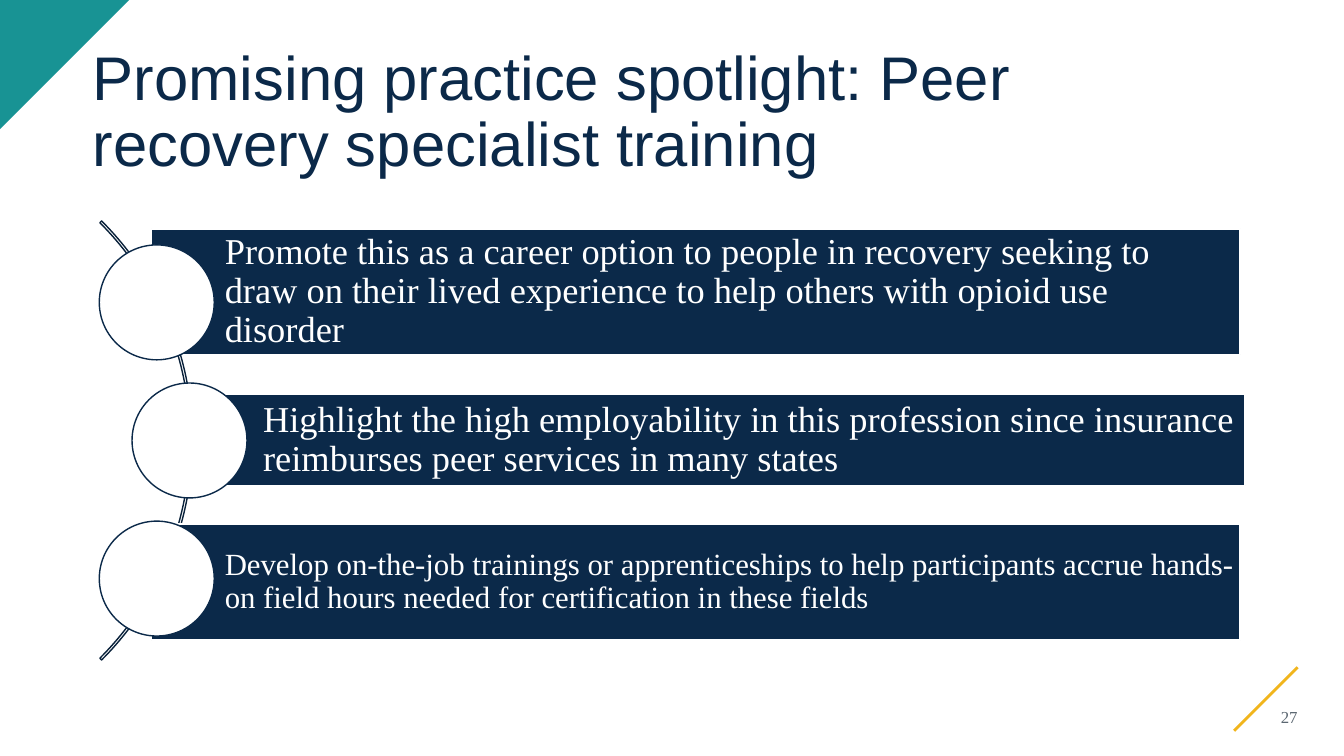
from math import sqrt

from lxml.etree import SubElement
from pptx import Presentation
from pptx.dml.color import RGBColor
from pptx.enum.shapes import MSO_CONNECTOR, MSO_SHAPE
from pptx.enum.text import MSO_ANCHOR, PP_ALIGN
from pptx.oxml.ns import qn
from pptx.util import Inches, Pt

NAVY = RGBColor(0x0B, 0x29, 0x49)
ARC_NAVY = RGBColor(0x09, 0x21, 0x3A)
TEAL = RGBColor(0x18, 0x93, 0x94)
GOLD = RGBColor(0xF1, 0xB5, 0x1C)
GRAY = RGBColor(0x5B, 0x67, 0x71)
WHITE = RGBColor(0xFF, 0xFF, 0xFF)

# Bar left, top, width, height, text margin, text size, text
PRACTICES = [
    (1.5, 2.27, 10.8, 1.25, 0.07, 26,
     "Promote this as a career option to people in recovery seeking to draw on "
     "their lived experience to help others with opioid use disorder"),
    (1.88, 3.91, 10.47, 0.91, 0.07, 26,
     "Highlight the high employability in this profession since insurance "
     "reimburses peer services in many states"),
    (1.5, 5.2, 10.8, 1.15, 0.06, 22,
     "Develop on-the-job trainings or apprenticeships to help participants accrue "
     "hands-on field hours needed for certification in these fields"),
]


def write_text(shape, text, font_name, size, color, margins=(0, 0, 0, 0),
               align=PP_ALIGN.LEFT, line_spacing=None):
    frame = shape.text_frame
    frame.word_wrap = True
    frame.vertical_anchor = MSO_ANCHOR.MIDDLE
    (frame.margin_left, frame.margin_top,
     frame.margin_right, frame.margin_bottom) = map(Inches, margins)
    para = frame.paragraphs[0]
    para.text = text
    para.alignment = align
    para.line_spacing = line_spacing
    para.font.name = font_name
    para.font.size = Pt(size)
    para.font.color.rgb = color


def add_outlined(page, kind, box, fill, line):
    shape = page.shapes.add_shape(kind, *map(Inches, box))
    shape.shadow.inherit = False
    if fill is None:
        shape.fill.background()
    else:
        shape.fill.solid()
        shape.fill.fore_color.rgb = fill
    shape.line.color.rgb = line
    shape.line.width = Pt(1)
    return shape


def add_corner_triangle(page, left, top, side):
    builder = page.shapes.build_freeform(Inches(left), Inches(top))
    builder.add_line_segments([(Inches(left + side), Inches(top)),
                               (Inches(left), Inches(top + side))], close=True)
    corner = builder.convert_to_shape()
    corner.shadow.inherit = False
    corner.fill.solid()
    corner.fill.fore_color.rgb = TEAL
    corner.line.fill.background()


def add_title(page, left, top, width, height):
    title = page.shapes.add_textbox(*map(Inches, (left, top, width, height)))
    write_text(title, "Promising practice spotlight: Peer recovery specialist training",
               "Arial", 44, NAVY, line_spacing=0.9)


def add_footer(page, left, top, width, height):
    """Gold slanted line, with the slide number at its lower right."""
    slant = page.shapes.add_connector(
        MSO_CONNECTOR.STRAIGHT, Inches(left), Inches(top + height),
        Inches(left + width), Inches(top))
    slant.line.color.rgb = GOLD
    slant.line.width = Pt(2)
    SubElement(slant.element.spPr, qn("a:effectLst"))
    number = page.shapes.add_textbox(
        Inches(left + 0.06), Inches(top + 0.12), Inches(width - 0.06), Inches(0.75))
    write_text(number, "27", "Times New Roman", 12, GRAY, align=PP_ALIGN.RIGHT)


def add_practice_list(page, left, top, size):
    """Bars whose circles sit at even heights along an arc in the given square."""
    arc = add_outlined(page, MSO_SHAPE.BLOCK_ARC, (left, top, size, size), None, ARC_NAVY)
    for index, value in enumerate((189, 27, 0.004)):
        arc.adjustments[index] = value

    center_x, center_y = left + size / 2, top + size / 2
    radius, step, diameter = 3.05, 1.37, 1.14
    for index, (*bar_box, margin, text_size, text) in enumerate(PRACTICES):
        bar = add_outlined(page, MSO_SHAPE.RECTANGLE, bar_box, NAVY, WHITE)
        write_text(bar, text, "Times New Roman", text_size, WHITE,
                   (0.73, margin, margin, margin), line_spacing=0.9)
        rise = (index - 1) * step
        circle_x = center_x + sqrt(radius ** 2 - rise ** 2)
        add_outlined(page, MSO_SHAPE.OVAL,
                     (circle_x - diameter / 2, center_y + rise - diameter / 2,
                      diameter, diameter), WHITE, NAVY)


def main():
    deck = Presentation()
    deck.slide_width, deck.slide_height = Inches(13.33), Inches(7.5)
    page = deck.slides.add_slide(deck.slide_layouts[6])
    add_corner_triangle(page, 0, 0, 1.28)
    add_title(page, 0.92, 0.4, 11.5, 1.45)
    add_footer(page, 12.24, 6.62, 0.63, 0.63)
    add_practice_list(page, -4.25, 1.29, 6.16)
    deck.save("out.pptx")


if __name__ == "__main__":
    main()
